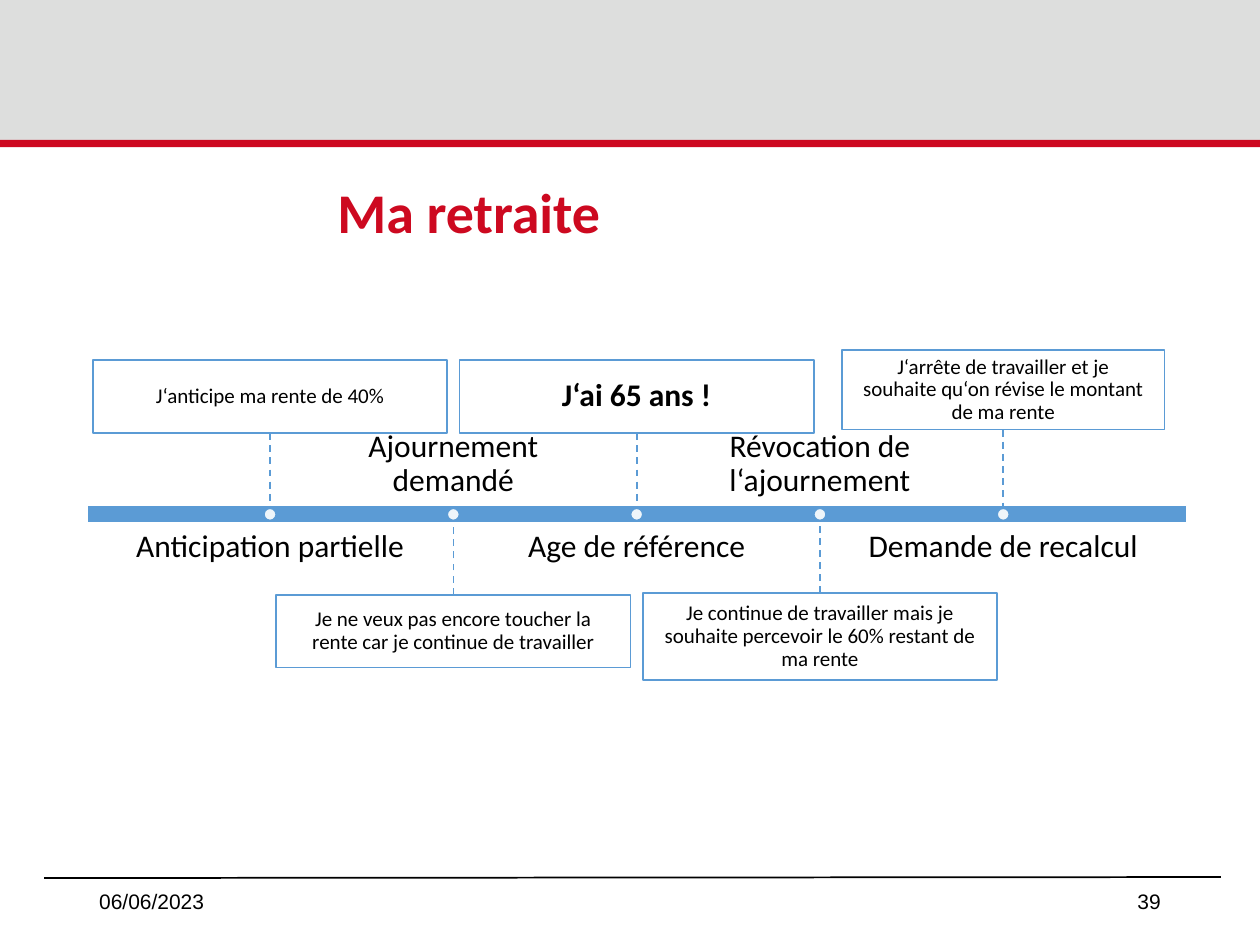
from dataclasses import dataclass

from lxml import etree
from pptx import Presentation
from pptx.dml.color import RGBColor
from pptx.enum.dml import MSO_LINE
from pptx.enum.shapes import MSO_CONNECTOR, MSO_SHAPE
from pptx.enum.text import MSO_ANCHOR, PP_ALIGN
from pptx.oxml.ns import qn
from pptx.util import Cm, Pt

RECTANGLE, OVAL = MSO_SHAPE.RECTANGLE, MSO_SHAPE.OVAL
STRAIGHT, DASH = MSO_CONNECTOR.STRAIGHT, MSO_LINE.DASH
TOP, MIDDLE, BOTTOM = MSO_ANCHOR.TOP, MSO_ANCHOR.MIDDLE, MSO_ANCHOR.BOTTOM
LEFT, CENTER, RIGHT = PP_ALIGN.LEFT, PP_ALIGN.CENTER, PP_ALIGN.RIGHT
SITE_TOP, SITE_BOTTOM = 0, 2


@dataclass(frozen=True)
class Theme:
    red: RGBColor = RGBColor(0xCD, 0x09, 0x20)
    grey: RGBColor = RGBColor(0xDD, 0xDE, 0xDD)
    blue: RGBColor = RGBColor(0x5B, 0x9B, 0xD5)
    white: RGBColor = RGBColor(0xFF, 0xFF, 0xFF)
    black: RGBColor = RGBColor(0, 0, 0)
    font: str = "Calibri"
    footer_font: str = "Arial"
    title_size: int = 32
    label_size: int = 18
    note_size: int = 12
    line_width: int = 1


@dataclass(frozen=True)
class Milestone:
    """A point on the timeline, its note box and its label on the other side."""
    label: str
    note: str
    above: bool
    box_top: float
    box_width: float = 7.14
    box_height: float = 1.47
    label_width: float = 5.9
    emphasis: bool = False


THEME = Theme()

# Timeline geometry in centimetres
BAR_LEFT, BAR_TOP, BAR_WIDTH, BAR_HEIGHT = 1.75, 10.19, 22.17, 0.36
AXIS = BAR_TOP + BAR_HEIGHT / 2
LABEL_HEIGHT, LABEL_GAP = 1.02, 0.33
DOT_SIZE = 0.25

MILESTONES = [
    Milestone("Anticipation partielle", "J‘anticipe ma rente de 40%", True, 7.26),
    Milestone("Ajournement demandé",
              "Je ne veux pas encore toucher la rente car je continue de travailler",
              False, 11.99),
    Milestone("Age de référence", "J‘ai 65 ans !", True, 7.26, emphasis=True),
    Milestone("Révocation de l‘ajournement",
              "Je continue de travailler mais je souhaite percevoir le 60% restant de ma rente",
              False, 11.96, box_height=1.75, label_width=7.19),
    Milestone("Demande de recalcul",
              "J‘arrête de travailler et je souhaite qu‘on révise le montant de ma rente",
              True, 7.06, box_width=6.5, box_height=1.6),
]


def add_block(slide, kind, left: float, top: float, width: float, height: float,
              fill: RGBColor, line: RGBColor | None = None, opacity: int = 100):
    shape = slide.shapes.add_shape(kind, Cm(left), Cm(top), Cm(width), Cm(height))
    shape.shadow.inherit = False
    shape.fill.solid()
    shape.fill.fore_color.rgb = fill
    if opacity < 100:
        color = shape.fill._xPr.find(qn("a:solidFill"))[0]
        etree.SubElement(color, qn("a:alpha"), val=str(opacity * 1000))
    if line is None:
        shape.line.fill.background()
    else:
        shape.line.color.rgb = line
        shape.line.width = Pt(THEME.line_width)
    return shape


def add_line(slide, start: tuple[float, float], end: tuple[float, float], color: RGBColor):
    connector = slide.shapes.add_connector(STRAIGHT, *map(Cm, start + end))
    connector.line.color.rgb = color
    connector.line.width = Pt(THEME.line_width)
    etree.SubElement(connector._element.spPr, qn("a:effectLst"))
    return connector


def write_text(shape, text: str, size: int, font: str = THEME.font,
               color: RGBColor = THEME.black, bold: bool = False, align=CENTER,
               anchor=MIDDLE, insets: tuple[float, float] = (0.25, 0.13),
               spacing: float = 0.9) -> None:
    frame = shape.text_frame
    frame.word_wrap = True
    frame.vertical_anchor = anchor
    frame.margin_left = frame.margin_right = Cm(insets[0])
    frame.margin_top = frame.margin_bottom = Cm(insets[1])
    paragraph = frame.paragraphs[0]
    paragraph.text = text
    paragraph.alignment = align
    paragraph.line_spacing = spacing
    paragraph.font.name = font
    paragraph.font.size = Pt(size)
    paragraph.font.bold = bold
    paragraph.font.color.rgb = color


def add_milestone(slide, milestone: Milestone, center: float) -> None:
    # Note box
    box = add_block(slide, RECTANGLE, center - milestone.box_width / 2, milestone.box_top,
                    milestone.box_width, milestone.box_height,
                    THEME.white, THEME.blue, opacity=90)
    size = THEME.label_size if milestone.emphasis else THEME.note_size
    write_text(box, milestone.note, size, bold=milestone.emphasis, insets=(0.33, 0.09))

    # Dashed link from the box to the axis, ending under the dot
    link = add_line(slide, (center, milestone.box_top), (center, AXIS), THEME.blue)
    link.line.dash_style = DASH
    link.begin_connect(box, SITE_BOTTOM if milestone.above else SITE_TOP)
    add_block(slide, OVAL, center - DOT_SIZE / 2, AXIS - DOT_SIZE / 2, DOT_SIZE, DOT_SIZE,
              THEME.white, THEME.blue, opacity=90)

    # Label on the opposite side of the axis
    label_top = AXIS + LABEL_GAP if milestone.above else AXIS - LABEL_GAP - LABEL_HEIGHT
    label = slide.shapes.add_textbox(Cm(center - milestone.label_width / 2), Cm(label_top),
                                     Cm(milestone.label_width), Cm(LABEL_HEIGHT))
    write_text(label, milestone.label, THEME.label_size,
               anchor=TOP if milestone.above else BOTTOM, insets=(0, 0))


def add_footer_text(slide, text: str, left: float, align) -> None:
    box = slide.shapes.add_textbox(Cm(left), Cm(17.65), Cm(5.72), Cm(1.02))
    write_text(box, text, THEME.note_size, font=THEME.footer_font, align=align, spacing=1.0)


def main() -> None:
    presentation = Presentation()
    presentation.slide_width, presentation.slide_height = Cm(25.4), Cm(19.05)
    slide = presentation.slides.add_slide(presentation.slide_layouts[5])

    # Header band and footer rule
    add_block(slide, RECTANGLE, 0, 0, 25.4, 2.82, THEME.grey)
    add_block(slide, RECTANGLE, 0, 2.82, 25.4, 0.15, THEME.red)
    add_line(slide, (0.89, 17.7), (24.61, 17.68), THEME.black)

    # Title
    title = slide.shapes.title
    title.left, title.top, title.width, title.height = Cm(6.55), Cm(3.33), Cm(17.12), Cm(2.01)
    write_text(title, "Ma retraite", THEME.title_size, color=THEME.red, bold=True, align=LEFT)

    # Timeline: milestones divide the bar into equal parts
    add_block(slide, RECTANGLE, BAR_LEFT, BAR_TOP, BAR_WIDTH, BAR_HEIGHT,
              THEME.blue, THEME.white)
    pitch = BAR_WIDTH / (len(MILESTONES) + 1)
    for position, milestone in enumerate(MILESTONES, start=1):
        add_milestone(slide, milestone, BAR_LEFT + position * pitch)

    # Date and slide number
    add_footer_text(slide, "06/06/2023", 1.75, LEFT)
    add_footer_text(slide, "39", 17.93, RIGHT)

    presentation.save("out.pptx")


if __name__ == "__main__":
    main()
